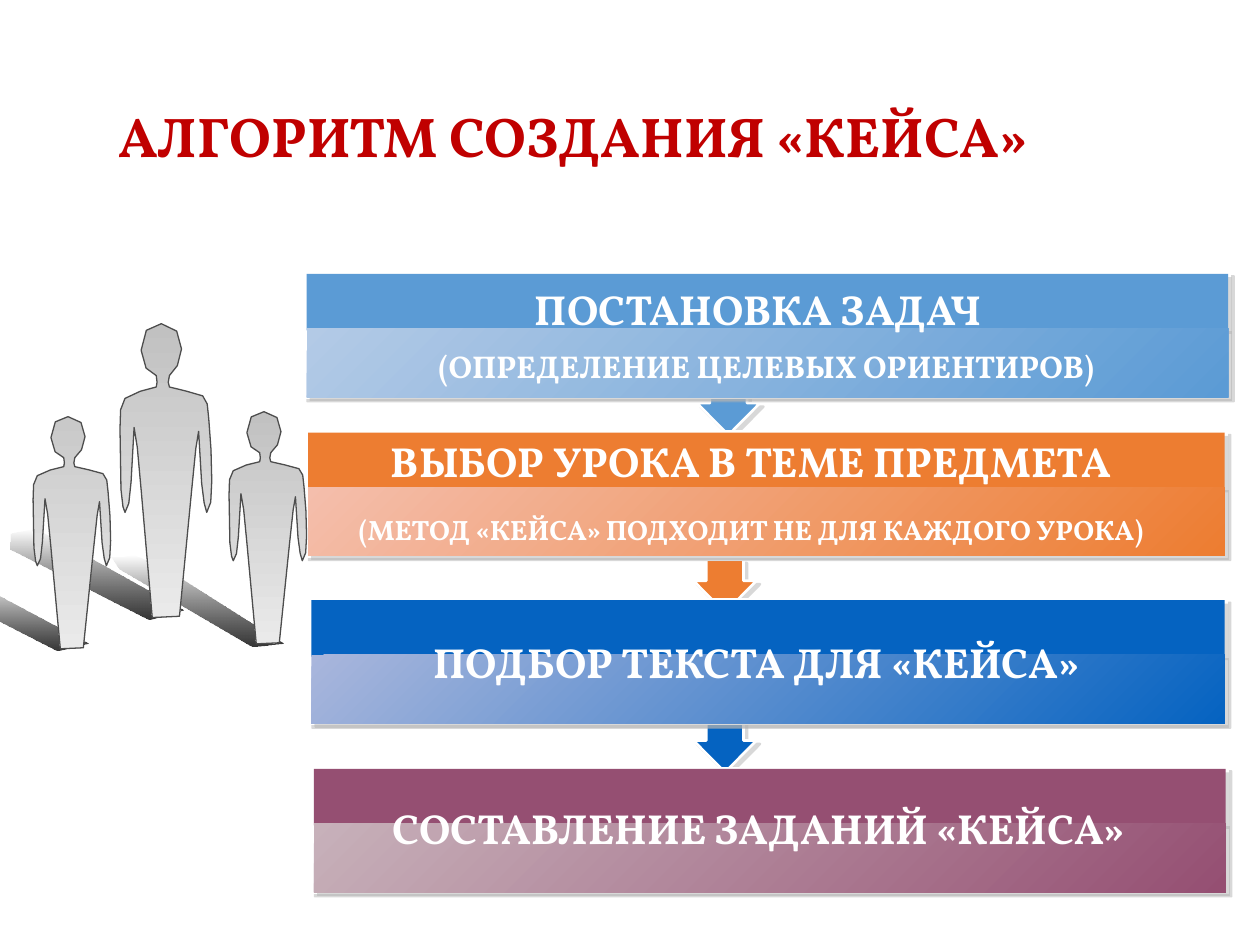
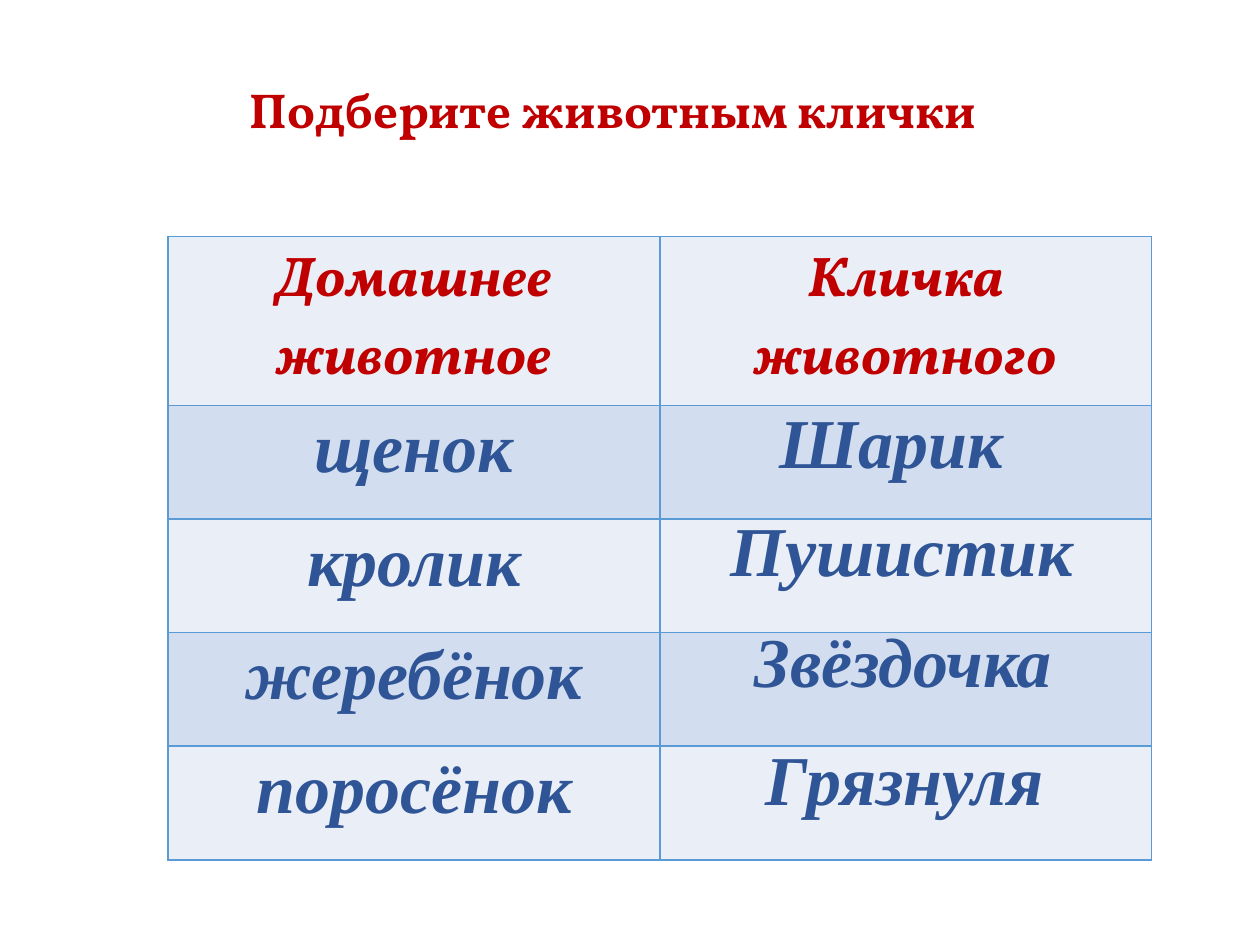
from pptx import Presentation
from pptx.dml.color import RGBColor
from pptx.enum.shapes import MSO_SHAPE as Preset
from pptx.enum.text import MSO_ANCHOR as Anchor
from pptx.enum.text import MSO_AUTO_SIZE as AutoSize
from pptx.enum.text import PP_ALIGN as Align
from pptx.oxml.ns import qn
from pptx.util import Cm, Pt
from lxml.etree import SubElement

WHITE = RGBColor(0xFF, 0xFF, 0xFF)
BLACK = RGBColor(0x00, 0x00, 0x00)
RED = RGBColor(0xC0, 0x00, 0x00)
NAVY = RGBColor(0x2F, 0x55, 0x97)
BLUE = RGBColor(0x5B, 0x9B, 0xD5)
PALE_BLUE = RGBColor(0xB3, 0xCA, 0xE6)
ORANGE = RGBColor(0xED, 0x7D, 0x31)
PALE_ORANGE = RGBColor(0xF4, 0xBE, 0xAC)
ROYAL = RGBColor(0x05, 0x63, 0xC1)
PALE_ROYAL = RGBColor(0xA9, 0xB6, 0xDC)
PLUM = RGBColor(0x95, 0x4F, 0x72)
PALE_PLUM = RGBColor(0xC7, 0xB1, 0xBA)
SHADOW_GREY = RGBColor(0xB2, 0xB2, 0xB2)
DARK_GREY = RGBColor(0x33, 0x33, 0x33)
EDGE_GREY = RGBColor(0x4D, 0x4D, 0x4D)
MID_GREY = RGBColor(0xC1, 0xC1, 0xC1)
SOFT_GREY = RGBColor(0xC9, 0xC9, 0xC9)
LIGHT_GREY = RGBColor(0xEA, 0xEA, 0xEA)
ROW_LIGHT = RGBColor(0xEA, 0xEF, 0xF7)
ROW_DARK = RGBColor(0xD2, 0xDE, 0xEF)

DISPLAY_FONT = "Vollkorn"
SERIF_FONT = "Times New Roman"

# Outlines: a pair is a line end, six numbers are a cubic curve.
PERSON = [
    (50, 42), (56, 39, 61, 31, 62, 21), (63, 11, 55, 0, 42, 1),
    (30, 1, 21, 8, 22, 22), (22, 35, 30, 40, 37, 42),
    (38, 46, 38, 49, 37, 51), (30, 54, 12, 54, 6, 60),
    (0, 64, 2, 72, 1, 84), (2, 132), (3, 143, 5, 151, 6, 150),
    (10, 152, 10, 137, 12, 126), (15, 83), (17, 84, 19, 107, 22, 132),
    (33, 233), (60, 232), (72, 133), (76, 105, 77, 87, 79, 86),
    (82, 127), (83, 138, 86, 150, 87, 150), (91, 150, 92, 137, 92, 125),
    (92, 113, 91, 87, 89, 76), (87, 65, 89, 62, 83, 58),
    (76, 54, 56, 54, 50, 51), (49, 50, 48, 45, 50, 42),
]
PERSON_SIZE = (92, 233)
CAST_SHADOWS = [
    [(225, 510), (200, 513), (95, 452), (79, 440, 93, 442, 99, 442),
     (104, 441, 107, 438, 128, 449)],
    [(146, 484), (118, 492), (8, 436), (-7, 424, 18, 420, 26, 420),
     (31, 420, 31, 421, 53, 432)],
    [(70, 510), (45, 516), (-49, 469), (-60, 460, -42, 455, -22, 462)],
]
CAST_SHADOW_UNIT = Cm(2.54) / 100


def flatten(outline, steps=2):
    """Turn an outline of lines and cubic curves into plain points."""
    points = []
    for segment in outline:
        if len(segment) == 2:
            points.append(segment)
            continue
        x0, y0 = points[-1]
        x1, y1, x2, y2, x3, y3 = segment
        for step in range(1, steps + 1):
            t = step / steps
            a, b, c, d = (1 - t) ** 3, 3 * t * (1 - t) ** 2, 3 * t * t * (1 - t), t ** 3
            points.append((a * x0 + b * x1 + c * x2 + d * x3,
                           a * y0 + b * y1 + c * y2 + d * y3))
    return points


class Deck:
    def __init__(self):
        self.presentation = Presentation()
        self.presentation.slide_width = Cm(25.4)
        self.presentation.slide_height = Cm(19.05)
        self.slide = None

    def add_slide(self):
        layout = self.presentation.slide_layouts.get_by_name("Title Only")
        self.slide = self.presentation.slides.add_slide(layout)

    def format(self, text_frame, size, color, font=DISPLAY_FONT, align=Align.CENTER,
               italic=False, line_spacing=None):
        for paragraph in text_frame.paragraphs:
            paragraph.alignment = align
            if line_spacing:
                paragraph.line_spacing = line_spacing
            for run in paragraph.runs:
                run.font.name = font
                run.font.size = Pt(size)
                run.font.bold = True
                run.font.italic = italic
                run.font.color.rgb = color

    def title(self, text, box, size, anchor=Anchor.MIDDLE, **style):
        shape = self.slide.shapes.title
        shape.left, shape.top, shape.width, shape.height = map(Cm, box)
        text_frame = shape.text_frame
        text_frame.text = text
        text_frame.auto_size = AutoSize.NONE
        text_frame.vertical_anchor = anchor
        self.format(text_frame, size, RED, **style)

    def label(self, text, box, size, color=WHITE, wrap=True, **style):
        text_frame = self.slide.shapes.add_textbox(*map(Cm, box)).text_frame
        text_frame.word_wrap = wrap
        text_frame.auto_size = AutoSize.SHAPE_TO_FIT_TEXT
        text_frame.text = text
        self.format(text_frame, size, color, **style)

    def gradient(self, shape, first, last, angle, clear_start=False):
        shape.fill.gradient()
        shape.fill.gradient_angle = 360 - angle
        for stop, color in zip(shape.fill.gradient_stops, (first, last)):
            stop.color.rgb = color
        if clear_start:
            start = shape._element.spPr.find(".//" + qn("a:srgbClr"))
            SubElement(start, qn("a:alpha"), val="0")

    def drop_shadow(self, shape):
        shape.shadow.inherit = False
        effects = shape._element.spPr.find(qn("a:effectLst"))
        shadow = SubElement(effects, qn("a:outerShdw"), blurRad="0", dist=str(Pt(2.8)),
                            dir="2700000", algn="ctr", rotWithShape="0")
        color = SubElement(shadow, qn("a:srgbClr"), val=str(SHADOW_GREY))
        SubElement(color, qn("a:alpha"), val="50000")

    def block(self, preset, box, color, line_width=None, pale=None):
        """Add a shape with a drop shadow; a pale colour makes it a gradient."""
        shape = self.slide.shapes.add_shape(preset, *map(Cm, box))
        if pale is None:
            shape.fill.solid()
            shape.fill.fore_color.rgb = color
        else:
            self.gradient(shape, pale, color, 45)
        if line_width:
            shape.line.color.rgb = WHITE
            shape.line.width = Pt(line_width)
        else:
            shape.line.fill.background()
        self.drop_shadow(shape)
        return shape

    def arrow(self, left, top, color):
        shape = self.block(Preset.DOWN_ARROW, (left, top, 1.27, 1.07), color, 1.5)
        shape.adjustments[0] = 0.59
        shape.adjustments[1] = 0.6

    def step_panel(self, left, top, width, color, pale):
        self.block(Preset.RECTANGLE, (left, top, width, 2.54), WHITE, 0.75)
        inner_left, inner_width = left + 0.06, width - 0.11
        self.block(Preset.RECTANGLE, (inner_left, top + 0.03, inner_width, 1.14), color)
        self.block(Preset.RECTANGLE, (inner_left, top + 1.13, inner_width, 1.39), color,
                   pale=pale)

    def outline(self, segments, first, last, left=0, top=0, x_unit=CAST_SHADOW_UNIT,
                y_unit=CAST_SHADOW_UNIT, clear_start=False):
        points = [(Cm(left) + x * x_unit, Cm(top) + y * y_unit)
                  for x, y in flatten(segments)]
        builder = self.slide.shapes.build_freeform(*points[0])
        builder.add_line_segments(points[1:], close=True)
        shape = builder.convert_to_shape()
        shape.shadow.inherit = False
        shape.line.fill.background()
        self.gradient(shape, first, last, 90, clear_start)
        return shape

    def person(self, left, top, width, height, color):
        units = Cm(width) / PERSON_SIZE[0], Cm(height) / PERSON_SIZE[1]
        shape = self.outline(PERSON, color, LIGHT_GREY, left, top, *units)
        shape.line.color.rgb = EDGE_GREY
        shape.line.width = Pt(0.75)

    def border(self, cell):
        properties = cell._tc.get_or_add_tcPr()
        for index, side in enumerate(("a:lnL", "a:lnR", "a:lnT", "a:lnB")):
            line = properties.makeelement(qn(side), {"w": str(Pt(1))})
            fill = SubElement(line, qn("a:solidFill"))
            SubElement(fill, qn("a:srgbClr"), val=str(BLUE))
            properties.insert(index, line)

    def table(self, rows, left, top, column_width, row_height):
        columns = len(rows[0])
        table = self.slide.shapes.add_table(
            len(rows), columns, Cm(left), Cm(top),
            Cm(column_width * columns), Cm(row_height * len(rows))).table
        for row_index, texts in enumerate(rows):
            for column_index, text in enumerate(texts):
                cell = table.cell(row_index, column_index)
                cell.fill.solid()
                cell.fill.fore_color.rgb = ROW_DARK if row_index % 2 else ROW_LIGHT
                self.border(cell)
                if not text:
                    continue
                cell.text_frame.text = text
                if row_index == 0:
                    self.format(cell.text_frame, 32, RED, italic=True)
                else:
                    cell.margin_left = cell.margin_right = Cm(0.18)
                    cell.margin_top = cell.margin_bottom = 0
                    self.format(cell.text_frame, 40, NAVY, SERIF_FONT, italic=True,
                                line_spacing=1.06)


def build_algorithm_slide(deck):
    deck.add_slide()
    deck.title("АЛГОРИТМ СОЗДАНИЯ «КЕЙСА»", (1.4, 0.97, 20.32, 3.68), 32, line_spacing=0.9)

    for left, top, color in ((14.05, 7.7, BLUE), (13.98, 11.28, ORANGE),
                             (13.98, 14.5, ROYAL)):
        deck.arrow(left, top, color)

    for panel in ((6.12, 5.49, 18.69, BLUE, PALE_BLUE),
                  (6.15, 8.69, 18.59, ORANGE, PALE_ORANGE),
                  (6.22, 12.07, 18.52, ROYAL, PALE_ROYAL),
                  (6.27, 15.47, 18.49, PLUM, PALE_PLUM)):
        deck.step_panel(*panel)

    for text, left, top, width, size in (
            ("(ОПРЕДЕЛЕНИЕ ЦЕЛЕВЫХ ОРИЕНТИРОВ)", 8.2, 6.88, 14.5, 18),
            ("(МЕТОД «КЕЙСА» ПОДХОДИТ НЕ ДЛЯ КАЖДОГО УРОКА)", 5.66, 10.21, 18.97, 16),
            ("ПОСТАНОВКА ЗАДАЧ", 8.41, 5.59, 13.74, 24),
            ("ВЫБОР УРОКА В ТЕМЕ ПРЕДМЕТА", 6.17, 8.66, 17.93, 24),
            ("ПОДБОР ТЕКСТА ДЛЯ «КЕЙСА»", 6.27, 12.7, 17.96, 24),
            ("СОСТАВЛЕНИЕ ЗАДАНИЙ «КЕЙСА»", 6.32, 16.05, 17.96, 24)):
        deck.label(text, (left, top, width, size * 0.05), size)

    for segments in CAST_SHADOWS:
        deck.outline(segments, BLACK, DARK_GREY, clear_start=True)
    for person in ((4.6, 8.28, 1.58, 4.7, MID_GREY),
                   (2.4, 6.5, 1.87, 5.95, MID_GREY),
                   (0.65, 8.38, 1.58, 4.7, SOFT_GREY)):
        deck.person(*person)


def build_pet_names_slide(deck):
    deck.add_slide()
    deck.title("Подберите животным клички", (4.78, 1.47, 15.72, 1.45), 28,
               anchor=Anchor.TOP, align=Align.LEFT)
    animals = ("щенок", "кролик", "жеребёнок", "поросёнок")
    rows = [("Домашнее животное", "Кличка животного")] + [(animal, "") for animal in animals]
    deck.table(rows, 3.39, 4.77, 9.91, 2.29)
    for name, left, top, width in (("Шарик", 15.47, 7.9, 5.05),
                                   ("Пушистик", 14.48, 10.08, 7.49),
                                   ("Звёздочка", 14.96, 12.32, 6.58),
                                   ("Грязнуля", 15.19, 14.71, 6.15)):
        deck.label(name, (left, top, width, 1.96), 40, NAVY, wrap=False,
                   font=SERIF_FONT, align=Align.LEFT, italic=True)


def main():
    deck = Deck()
    build_algorithm_slide(deck)
    build_pet_names_slide(deck)
    deck.presentation.save("out.pptx")


if __name__ == "__main__":
    main()
